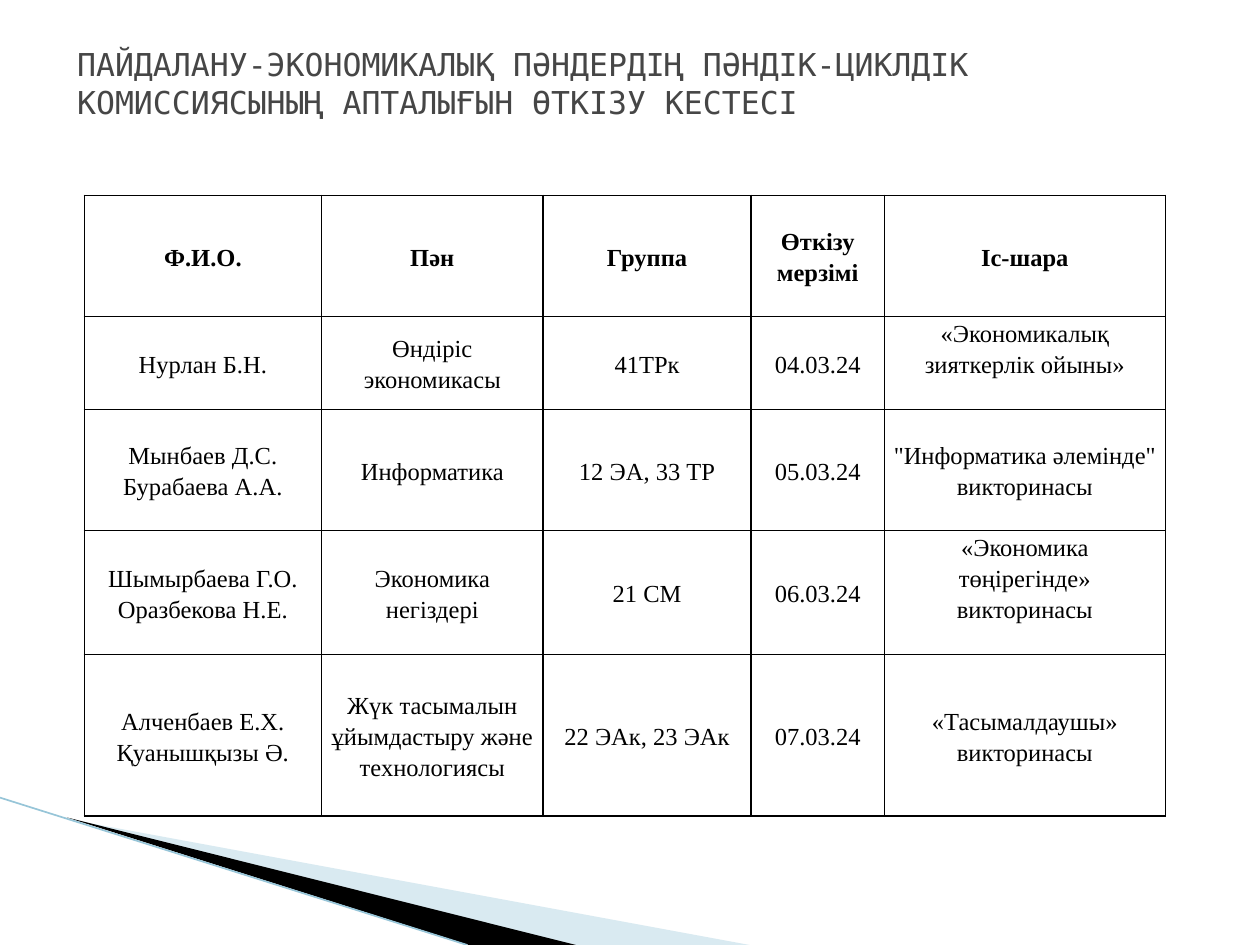
"""Build the weekly schedule slide of the subject commission."""
from lxml.etree import SubElement
from pptx import Presentation
from pptx.dml.color import RGBColor
from pptx.enum.shapes import MSO_CONNECTOR
from pptx.enum.text import MSO_ANCHOR, MSO_AUTO_SIZE, PP_ALIGN
from pptx.oxml.ns import qn
from pptx.util import Cm, Pt

BLACK = RGBColor(0x00, 0x00, 0x00)
GREY = RGBColor(0x46, 0x46, 0x46)
PALE_BLUE = RGBColor(0xA0, 0xCB, 0xDC)
LINE_BLUE = RGBColor(0x97, 0xC5, 0xD8)

TITLE = ("ПАЙДАЛАНУ-ЭКОНОМИКАЛЫҚ ПӘНДЕРДІҢ ПӘНДІК-ЦИКЛДІК "
         "КОМИССИЯСЫНЫҢ АПТАЛЫҒЫН ӨТКІЗУ КЕСТЕСІ")
COLUMN_WIDTHS = [4.78, 4.47, 4.19, 2.69, 5.66]
ROW_HEIGHTS = [2.44, 1.8, 2.44, 2.44, 3.25]
SCHEDULE = [
    ["Ф.И.О.", "Пән", "Группа", "Өткізу мерзімі", "Іс-шара"],
    ["Нурлан Б.Н.", "Өндіріс экономикасы", "41ТРк", "04.03.24",
     "«Экономикалық зияткерлік ойыны»"],
    ["Мынбаев Д.С. Бурабаева А.А.", "Информатика", "12 ЭА, 33 ТР", "05.03.24",
     "\"Информатика әлемінде\" викторинасы"],
    ["Шымырбаева Г.О.\nОразбекова Н.Е.", "Экономика негіздері", "21 СМ", "06.03.24",
     "«Экономика төңірегінде» викторинасы"],
    ["Алченбаев Е.Х. Қуанышқызы Ә.", "Жүк тасымалын ұйымдастыру және технологиясы",
     "22 ЭАк, 23 ЭАк", "07.03.24", "«Тасымалдаушы» викторинасы"],
]
RAISED_CELLS = {(1, 4), (3, 4)}


def add_wedge(slide, points, color, opacity=100):
    """Add a filled outline through points given in centimetres."""
    corners = [(Cm(x), Cm(y)) for x, y in points]
    builder = slide.shapes.build_freeform(*corners[0])
    builder.add_line_segments(corners[1:])
    wedge = builder.convert_to_shape()
    wedge.shadow.inherit = False
    wedge.fill.solid()
    wedge.fill.fore_color.rgb = color
    wedge.line.fill.background()
    if opacity < 100:
        color_element = wedge.fill._xPr.find(qn("a:solidFill"))[0]
        SubElement(color_element, qn("a:alpha"), val=str(opacity * 1000))


def add_edge_line(slide):
    """Add the thin line along the lower left corner."""
    line = slide.shapes.add_connector(
        MSO_CONNECTOR.STRAIGHT, Cm(0), Cm(16.08), Cm(9.42), Cm(19.05))
    line.line.color.rgb = LINE_BLUE
    line.line.width = Pt(0.95)
    SubElement(line._element.spPr, qn("a:effectLst"))


def format_title(slide):
    """Place and fill the title placeholder."""
    title = slide.shapes.title
    title.left, title.top, title.width, title.height = Cm(1.3), Cm(0.74), Cm(22.86), Cm(2.59)
    frame = title.text_frame
    frame.text = TITLE
    frame.word_wrap = True
    frame.auto_size = MSO_AUTO_SIZE.NONE
    frame.vertical_anchor = MSO_ANCHOR.MIDDLE
    frame.margin_bottom = Cm(0.86)
    paragraph = frame.paragraphs[0]
    paragraph.alignment = PP_ALIGN.LEFT
    paragraph.line_spacing = 1.0
    paragraph.font.name = "DejaVu Sans Mono"
    paragraph.font.size = Pt(18)
    paragraph.font.color.rgb = GREY


def add_borders(cell):
    """Draw a thin black border on every side of a cell."""
    properties = cell._tc.get_or_add_tcPr()
    for index, side in enumerate(("a:lnL", "a:lnR", "a:lnT", "a:lnB")):
        border = properties.makeelement(qn(side), {"w": str(Pt(1))})
        fill = SubElement(border, qn("a:solidFill"))
        SubElement(fill, qn("a:srgbClr"), val=str(BLACK))
        properties.insert(index, border)


def format_cell(cell, text, bold, raised):
    """Fill and style one table cell."""
    cell.text = text
    cell.fill.background()
    cell.vertical_anchor = MSO_ANCHOR.MIDDLE
    cell.margin_left = cell.margin_right = Cm(0.18)
    cell.margin_top = Cm(0)
    cell.margin_bottom = Cm(0.62 if raised else 0)
    for paragraph in cell.text_frame.paragraphs:
        paragraph.alignment = PP_ALIGN.CENTER
        paragraph.line_spacing = 1.15
        paragraph.font.name = "Times New Roman"
        paragraph.font.size = Pt(14)
        paragraph.font.bold = bold
        paragraph.font.color.rgb = BLACK
    add_borders(cell)


def add_schedule(slide):
    """Add the schedule table."""
    table = slide.shapes.add_table(
        len(SCHEDULE), len(COLUMN_WIDTHS), Cm(1.7), Cm(3.94),
        Cm(sum(COLUMN_WIDTHS)), Cm(sum(ROW_HEIGHTS))).table
    table.horz_banding = False
    for column, width in zip(table.columns, COLUMN_WIDTHS):
        column.width = Cm(width)
    for row, height in zip(table.rows, ROW_HEIGHTS):
        row.height = Cm(height)
    for row_index, texts in enumerate(SCHEDULE):
        for column_index, text in enumerate(texts):
            format_cell(table.cell(row_index, column_index), text,
                        row_index == 0, (row_index, column_index) in RAISED_CELLS)


def main():
    """Create the presentation and save it."""
    presentation = Presentation()
    presentation.slide_width, presentation.slide_height = Cm(25.4), Cm(19.05)
    slide = presentation.slides.add_slide(presentation.slide_layouts[5])
    add_wedge(slide, [(1.4, 16.52), (15.11, 19.05), (11.58, 19.05)], PALE_BLUE, 40)
    add_wedge(slide, [(1.35, 16.48), (11.61, 19.05), (9.45, 19.05)], BLACK)
    add_edge_line(slide)
    format_title(slide)
    add_schedule(slide)
    presentation.save("out.pptx")


if __name__ == "__main__":
    main()
